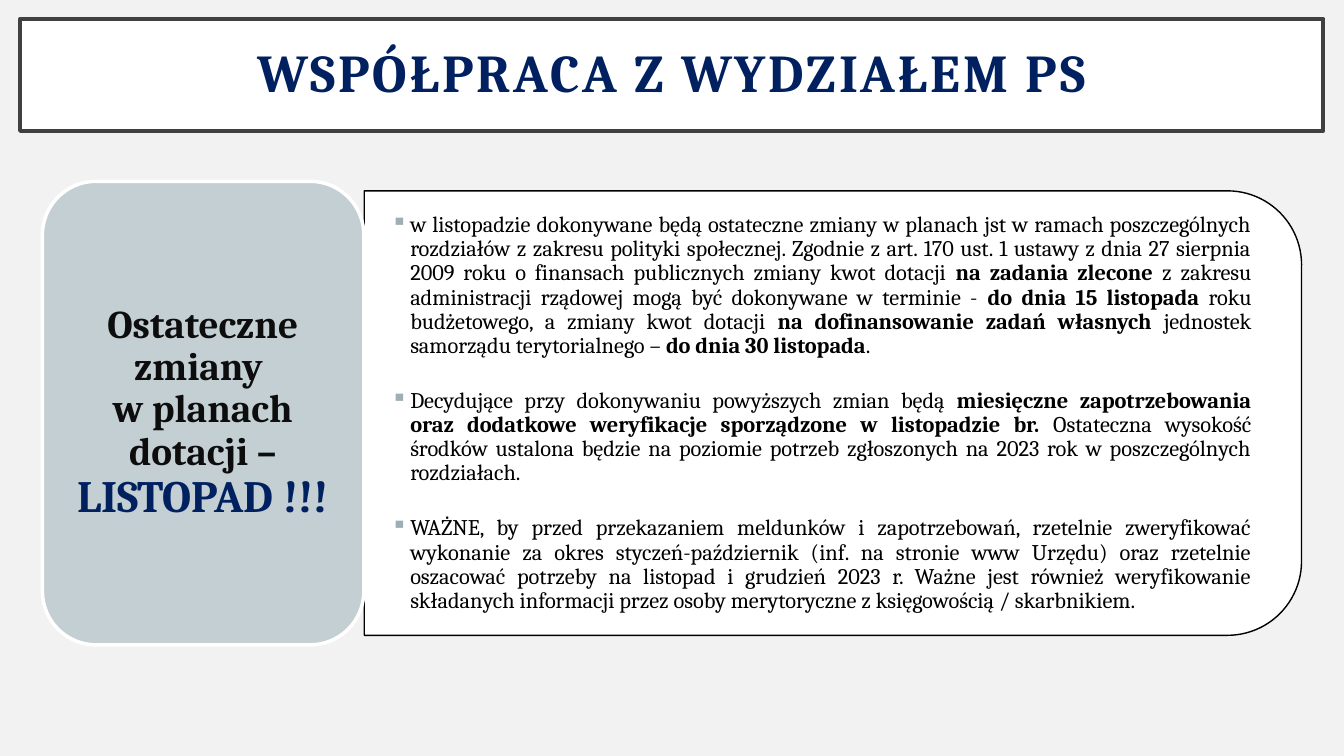
from dataclasses import dataclass

from lxml.etree import SubElement
from pptx import Presentation
from pptx.dml.color import RGBColor
from pptx.enum.shapes import MSO_SHAPE as Kind
from pptx.enum.text import MSO_ANCHOR as Anchor, PP_ALIGN as Align
from pptx.oxml.ns import qn
from pptx.slide import Slide
from pptx.text.text import TextFrame, _Paragraph as Para
from pptx.util import Cm, Pt

WHITE = RGBColor(0xFF, 0xFF, 0xFF)
BLACK = RGBColor(0x00, 0x00, 0x00)
INK = RGBColor(0x0D, 0x0D, 0x0D)
NAVY = RGBColor(0x00, 0x20, 0x60)
GREY = RGBColor(0x40, 0x40, 0x40)
MIST = RGBColor(0xC3, 0xCF, 0xD3)
TEAL = RGBColor(0x9B, 0xAF, 0xB5)
PALE = RGBColor(0xF2, 0xF2, 0xF2)
FONT = "Cambria"


@dataclass
class Box:
    left: float
    top: float
    width: float
    height: float

    def place(self) -> list[Cm]:
        return [Cm(n) for n in (self.left, self.top, self.width, self.height)]


@dataclass
class Panel:
    kind: Kind
    box: Box
    fill: RGBColor
    line: RGBColor
    weight: float
    turn: float = 0


@dataclass
class Span:
    text: str
    bold: bool = False
    size: float = 16
    color: RGBColor = BLACK


@dataclass
class Block:
    box: Box
    pad: tuple[float, float]
    align: Align
    paras: list[list[Span]]
    gap: float = 0
    bullet: bool = False
    track: float = 0


SHEET = Panel(Kind.ROUND_2_SAME_RECTANGLE, Box(15.39, -1.4, 11.2, 23.62), WHITE, BLACK, 1, 90)
CARD = Panel(Kind.ROUNDED_RECTANGLE, Box(1.07, 4.57, 8.1, 11.68), MIST, WHITE, 2.5)
FRAME = Panel(Kind.RECTANGLE, Box(0.51, 0.48, 32.84, 2.82), WHITE, GREY, 3)

TITLE = Block(FRAME.box, (0.76, 0.51), Align.CENTER,
              [[Span("WSPÓŁPRACA Z WYDZIAŁEM PS", True, 38, NAVY)]], track=2)
LABEL = Block(Box(1.45, 4.98, 7.32, 10.87), (0.3, 0.15), Align.CENTER, [[
    Span("Ostateczne zmiany \nw planach dotacji – ", True, 28, INK),
    Span("LISTOPAD !!!", True, 32, NAVY),
]])
RULES = Block(Box(9.17, 5.36, 23.06, 10.11), (0.69, 0.36), Align.JUSTIFY, [
    [
        Span("w listopadzie dokonywane będą ostateczne zmiany w planach jst w ramach "
             "poszczególnych rozdziałów z zakresu polityki społecznej. Zgodnie z art. 170 "
             "ust. 1 ustawy z dnia 27 sierpnia 2009 roku o finansach publicznych zmiany "
             "kwot dotacji "),
        Span("na zadania zlecone ", True),
        Span("z zakresu administracji rządowej mogą być dokonywane w terminie - "),
        Span("do dnia 15 listopada ", True),
        Span("roku budżetowego, a zmiany kwot dotacji "),
        Span("na dofinansowanie zadań własnych ", True),
        Span("jednostek samorządu terytorialnego – "),
        Span("do dnia 30 listopada", True),
        Span("."),
    ],
    [
        Span("Decydujące przy dokonywaniu powyższych zmian będą "),
        Span("miesięczne zapotrzebowania oraz dodatkowe weryfikacje sporządzone "
             "w listopadzie br. ", True),
        Span("Ostateczna wysokość środków ustalona będzie na poziomie potrzeb "
             "zgłoszonych na 2023 rok w poszczególnych rozdziałach."),
    ],
    [
        Span("WAŻNE, by przed przekazaniem meldunków i zapotrzebowań, rzetelnie "
             "zweryfikować wykonanie za okres styczeń-październik (inf. na stronie www "
             "Urzędu) oraz rzetelnie oszacować potrzeby na listopad i grudzień 2023 r. "
             "Ważne jest również weryfikowanie składanych informacji przez osoby "
             "merytoryczne z księgowością / skarbnikiem."),
    ],
], gap=22, bullet=True)


def draw(slide: Slide, panel: Panel) -> TextFrame:
    shape = slide.shapes.add_shape(panel.kind, *panel.box.place())
    shape.shadow.inherit = False
    shape.rotation = panel.turn
    shape.fill.solid()
    shape.fill.fore_color.rgb = panel.fill
    shape.line.color.rgb = panel.line
    shape.line.width = Pt(panel.weight)
    return shape.text_frame


def mark(para: Para) -> None:
    props = para._p.get_or_add_pPr()
    props.set("marL", str(Cm(0.48)))
    props.set("indent", str(-Cm(0.48)))
    tint = SubElement(props, qn("a:buClr"))
    SubElement(tint, qn("a:srgbClr")).set("val", str(TEAL))
    SubElement(props, qn("a:buChar")).set("char", "▪")


def add(para: Para, span: Span, track: float) -> None:
    for row, text in enumerate(span.text.split("\n")):
        if row:
            para.add_line_break()
        run = para.add_run()
        run.text = text
        font = run.font
        font.name = FONT
        font.size = Pt(span.size)
        font.bold = span.bold
        font.color.rgb = span.color
        if track:
            run._r.get_or_add_rPr().set("spc", str(int(track * 100)))


def write(frame: TextFrame, block: Block) -> None:
    frame.word_wrap = True
    frame.vertical_anchor = Anchor.MIDDLE
    side, edge = block.pad
    frame.margin_left = frame.margin_right = Cm(side)
    frame.margin_top = frame.margin_bottom = Cm(edge)
    for index, spans in enumerate(block.paras):
        para = frame.add_paragraph() if index else frame.paragraphs[0]
        para.alignment = block.align
        para.line_spacing = 0.9
        para.space_before = Pt(block.gap if index else 0)
        if block.bullet:
            mark(para)
        for span in spans:
            add(para, span, block.track)


def main() -> None:
    deck = Presentation()
    deck.slide_width = Cm(33.87)
    deck.slide_height = Cm(19.05)
    slide = deck.slides.add_slide(deck.slide_layouts[6])
    slide.background.fill.solid()
    slide.background.fill.fore_color.rgb = PALE
    write(draw(slide, FRAME), TITLE)
    for panel, block in ((SHEET, RULES), (CARD, LABEL)):
        draw(slide, panel)
        write(slide.shapes.add_textbox(*block.box.place()).text_frame, block)
    deck.save("out.pptx")


if __name__ == "__main__":
    main()
